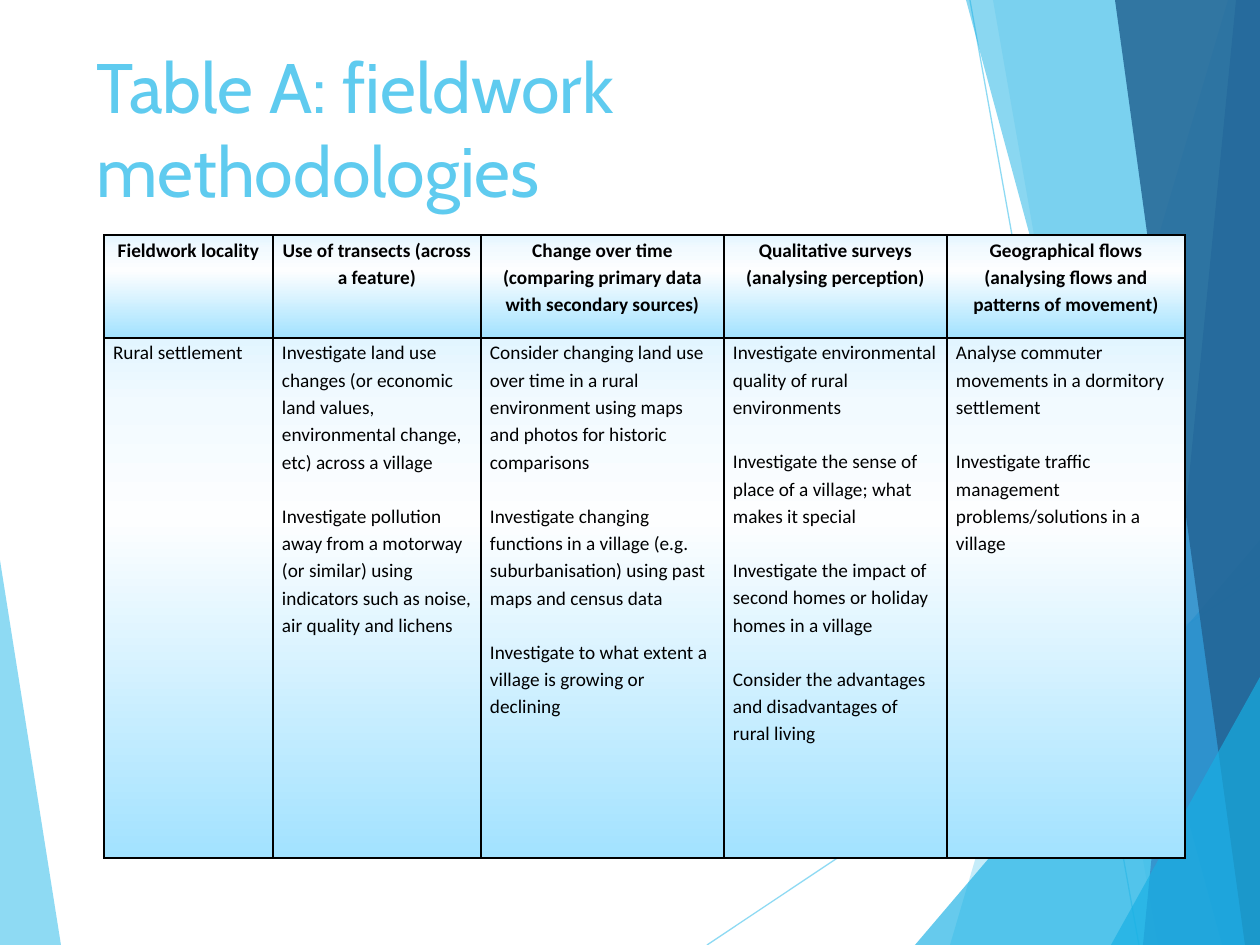
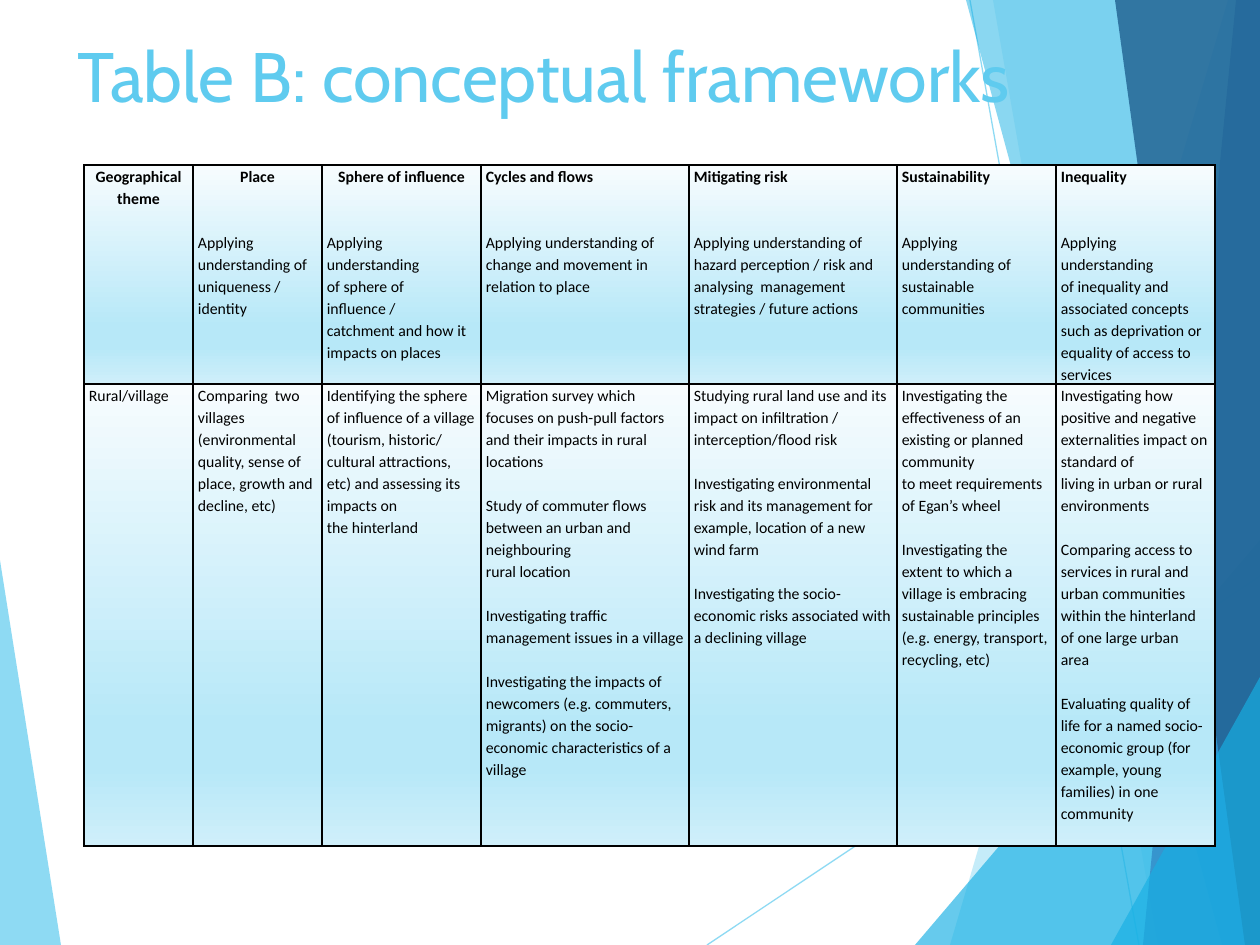
from lxml.etree import SubElement
from pptx import Presentation
from pptx.dml.color import RGBColor as RGB
from pptx.enum.shapes import MSO_CONNECTOR as CONN
from pptx.enum.text import MSO_ANCHOR as ANCHOR, PP_ALIGN as ALIGN
from pptx.oxml.ns import qn
from pptx.util import Emu, Pt

EMU_PER_PX = 914400 / 126
WIDTH, HEIGHT = 1260, 945

COLORS = {
    "sky": "5FCBEF",
    "cyan": "17B0E4",
    "blue": "2E83C3",
    "navy": "226292",
    "black": "000000",
}

# Gradient stops, top to bottom: (percent, colour)
ICE = [(0, "E2F5FF"), (13, "F2FAFF"), (35, "FDFEFF"), (100, "A2E2FF")]
MIST = [(0, "F7FCFE"), (74, "B7E8F8"), (83, "B7E8F8"), (100, "CFEFFA")]

# Backdrop: (colour, opacity percent, points)
LEFT_WEDGE = ("sky", 70, [(0, 560), (61, HEIGHT), (0, HEIGHT)])
RAYS = [((707, HEIGHT), (WIDTH, 576)), ((970, 0), (1139, HEIGHT))]
RIGHT_FACETS = [
    ("sky", 36, [(1228, 0), (950, HEIGHT), (WIDTH, HEIGHT), (WIDTH, 0)]),
    ("sky", 20, [(993, 0), (1158, HEIGHT), (WIDTH, HEIGHT), (WIDTH, 0)]),
    ("cyan", 66, [(915, HEIGHT), (WIDTH, 540), (WIDTH, HEIGHT)]),
    ("cyan", 50, [(966, 0), (1222, HEIGHT), (WIDTH, HEIGHT), (WIDTH, 0)]),
    ("blue", 70, [(1236, 0), (1143, HEIGHT), (WIDTH, HEIGHT), (WIDTH, 0)]),
    ("navy", 82, [(1115, 0), (1245, HEIGHT), (WIDTH, HEIGHT), (WIDTH, 0)]),
    ("cyan", 66, [(1111, HEIGHT), (WIDTH, 677), (WIDTH, HEIGHT)]),
]

# Cell text: "|" starts a paragraph, every further "|" adds one line of space
METHODS = [
    [
        "Fieldwork locality",
        "Use of transects (across a feature)",
        "Change over time (comparing primary data with secondary sources)",
        "Qualitative surveys (analysing perception)",
        "Geographical flows (analysing flows and patterns of movement)",
    ],
    [
        "Rural settlement",
        "Investigate land use changes (or economic land values, environmental "
        "change, etc) across a village||Investigate pollution away from a motorway "
        "(or similar) using indicators such as noise, air quality and lichens",
        "Consider changing land use over time in a rural environment using maps and "
        "photos for historic comparisons||Investigate changing functions in a "
        "village (e.g. suburbanisation) using past maps and census data||"
        "Investigate to what extent a village is growing or declining",
        "Investigate environmental quality of rural environments||Investigate the "
        "sense of place of a village; what makes it special||Investigate the impact "
        "of second homes or holiday homes in a village||Consider the advantages and "
        "disadvantages of rural living",
        "Analyse commuter movements in a dormitory settlement||Investigate traffic "
        "management problems/solutions in a village",
    ],
]

FRAMEWORKS = [
    [
        "Geographical theme",
        "Place|||Applying understanding of uniqueness / identity",
        "Sphere of influence|||Applying understanding|of sphere of influence /|"
        "catchment and how it impacts on places",
        "Cycles and flows|||Applying understanding of change and movement in "
        "relation to place",
        "Mitigating risk|||Applying understanding of hazard perception / risk and "
        "analysing  management strategies / future actions",
        "Sustainability|||Applying understanding of sustainable|communities",
        "Inequality|||Applying understanding|of inequality and|associated concepts "
        "such as deprivation or equality of access to services",
    ],
    [
        "Rural/village",
        "Comparing  two villages (environmental quality, sense of place, growth and "
        "decline, etc)",
        "Identifying the sphere of influence of a village (tourism, historic/ "
        "cultural attractions, etc) and assessing its impacts on|the hinterland",
        "Migration survey which focuses on push-pull factors and their impacts in "
        "rural locations||Study of commuter flows between an urban and neighbouring|"
        "rural location||Investigating traffic management issues in a village||"
        "Investigating the impacts of newcomers (e.g. commuters, migrants) on the "
        "socio-economic characteristics of a village",
        "Studying rural land use and its impact on infiltration / "
        "interception/flood risk||Investigating environmental risk and its "
        "management for example, location of a new wind farm||Investigating the "
        "socio-economic risks associated with a declining village",
        "Investigating the effectiveness of an existing or planned community|to "
        "meet requirements of Egan’s wheel||Investigating the extent to which a "
        "village is embracing sustainable principles (e.g. energy, transport, "
        "recycling, etc)",
        "Investigating how positive and negative externalities impact on standard "
        "of|living in urban or rural environments||Comparing access to services in "
        "rural and urban communities|within the hinterland of one large urban area||"
        "Evaluating quality of life for a named socio-economic group (for|example, "
        "young families) in one community",
    ],
]


def px(n):
    return Emu(round(n * EMU_PER_PX))


def assign(obj, values):
    for name, value in values.items():
        setattr(obj, name, value)


def add_solid(parent, color):
    fill = SubElement(parent, qn("a:solidFill"))
    SubElement(fill, qn("a:srgbClr"), val=color)


def fade(sp, percent):
    for clr in sp._element.spPr.iter(qn("a:srgbClr")):
        SubElement(clr, qn("a:alpha"), val=str(percent * 1000))


class Deck:
    title_font = {"name": "Cabin", "size": Pt(40)}
    table_font = "Calibri"
    line_spacing = 1.15
    line_pitch = 1.4  # drawn line height per point of text

    def __init__(self):
        self.prs = Presentation()
        assign(self.prs, {"slide_width": px(WIDTH), "slide_height": px(HEIGHT)})
        self.slide = None

    def new_slide(self):
        self.slide = self.prs.slides.add_slide(self.prs.slide_layouts[6])
        self.polygon(*LEFT_WEDGE)
        for start, end in RAYS:
            self.ray(start, end)
        for facet in RIGHT_FACETS:
            self.polygon(*facet)

    def polygon(self, color, opacity, points):
        fb = self.slide.shapes.build_freeform(*points[0], scale=EMU_PER_PX)
        fb.add_line_segments(points[1:], close=True)
        sp = fb.convert_to_shape()
        sp.shadow.inherit = False
        sp.fill.solid()
        sp.fill.fore_color.rgb = RGB.from_string(COLORS[color])
        sp.line.fill.background()
        fade(sp, opacity)

    def ray(self, start, end):
        ends = [px(n) for n in start + end]
        cn = self.slide.shapes.add_connector(CONN.STRAIGHT, *ends)
        cn.line.width = Pt(0.75)
        cn.line.color.rgb = RGB.from_string(COLORS["sky"])
        fade(cn, 70)
        SubElement(cn._element.spPr, qn("a:effectLst"))

    def text_run(self, p, text, color, font):
        r = p.add_run()
        r.text = text
        assign(r.font, font)
        r.font.color.rgb = RGB.from_string(COLORS[color])

    def title(self, text, box):
        sp = self.slide.shapes.add_textbox(*map(px, box))
        tf = sp.text_frame
        assign(tf, {"word_wrap": True, "vertical_anchor": ANCHOR.TOP})
        self.text_run(tf.paragraphs[0], text, "sky", self.title_font)

    def table(self, rows, at, widths, heights, size, inset, stops, centred):
        """The first `centred` headings are centred, the others stand left."""
        frame = self.slide.shapes.add_table(
            len(rows), len(widths), *map(px, (*at, sum(widths), sum(heights))))
        tbl = frame.table
        assign(tbl, {"first_row": False, "horz_banding": False})
        for col, width in zip(tbl.columns, widths):
            col.width = px(width)
        for row, height in zip(tbl.rows, heights):
            row.height = px(height)
        for i, texts in enumerate(rows):
            for j, text in enumerate(texts):
                cell = tbl.cell(i, j)
                assign(cell, {"margin_left": px(inset), "margin_right": px(inset),
                              "margin_top": 0, "margin_bottom": 0})
                self.cell_style(cell, stops)
                self.cell_text(cell, text, size, i == 0, j < centred)

    def cell_text(self, cell, text, size, is_head, centre):
        tf = cell.text_frame
        p, gap = tf.paragraphs[0], 0
        for n, part in enumerate(text.split("|")):
            if not part:
                gap += 1
                continue
            if n:
                p = tf.add_paragraph()
            heading = is_head and n == 0
            assign(p, {
                "line_spacing": self.line_spacing,
                "space_before": Pt(gap * size * self.line_pitch),
                "alignment": ALIGN.CENTER if heading and centre else ALIGN.LEFT,
            })
            font = {"name": self.table_font, "size": Pt(size), "bold": heading}
            self.text_run(p, part, "black", font)
            gap = 0

    def cell_style(self, cell, stops):
        tc_pr = cell._tc.get_or_add_tcPr()
        for side in "LRTB":
            ln = SubElement(tc_pr, qn(f"a:ln{side}"), w=str(int(Pt(1))))
            add_solid(ln, COLORS["black"])
        grad = SubElement(tc_pr, qn("a:gradFill"), rotWithShape="1")
        gs_lst = SubElement(grad, qn("a:gsLst"))
        for percent, color in stops:
            gs = SubElement(gs_lst, qn("a:gs"), pos=str(percent * 1000))
            SubElement(gs, qn("a:srgbClr"), val=color)
        SubElement(grad, qn("a:lin"), ang="5400000", scaled="0")


def main():
    deck = Deck()

    # Table A
    deck.new_slide()
    deck.title("Table A: fieldwork methodologies", (84, 37, 874, 181))
    deck.table(METHODS, at=(104, 235), widths=[169, 208, 243, 223, 238],
               heights=[103, 520], size=11, inset=9, stops=ICE, centred=5)

    # Table B
    deck.new_slide()
    deck.title("Table B: conceptual frameworks", (65, 26, 1134, 158))
    deck.table(FRAMEWORKS, at=(84, 165),
               widths=[109, 129, 159, 208, 208, 159, 159],
               heights=[219, 462], size=9, inset=5, stops=MIST, centred=3)

    deck.prs.save("out.pptx")


if __name__ == "__main__":
    main()
